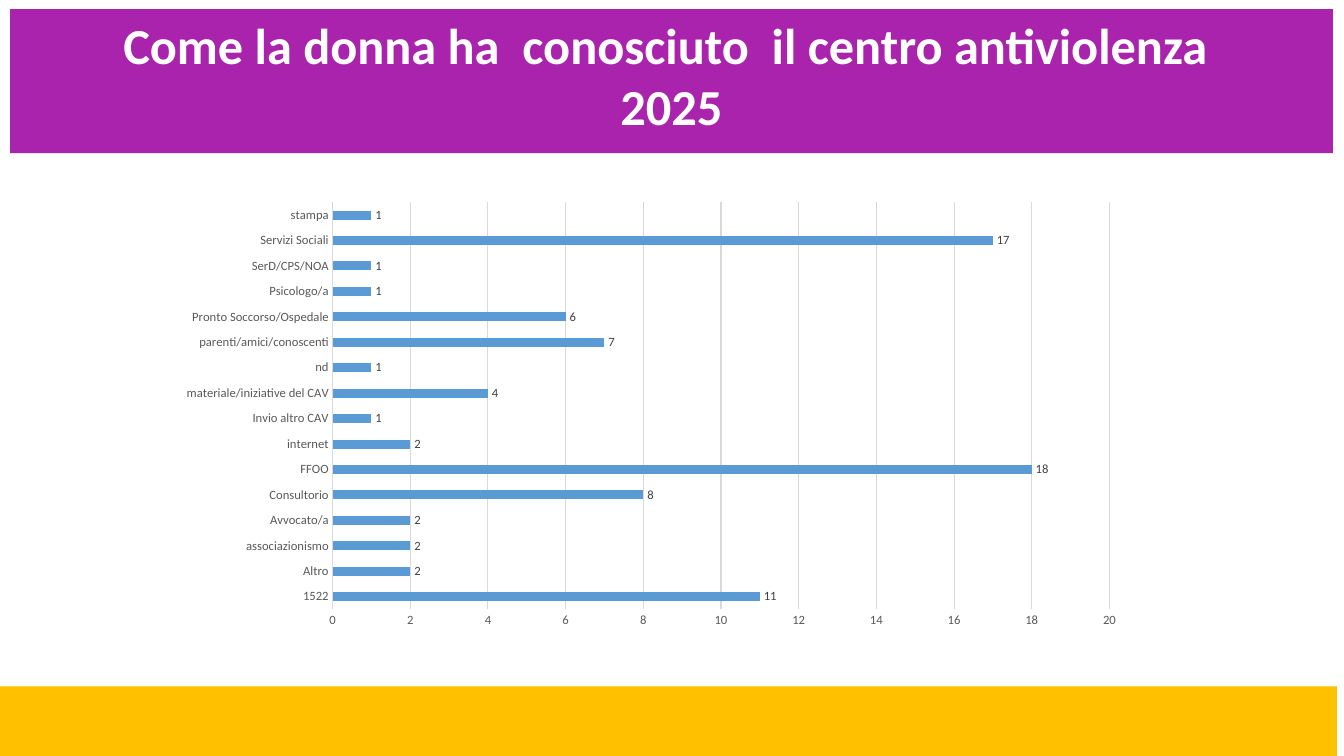
from dataclasses import dataclass

from pptx import Presentation
from pptx.chart.data import CategoryChartData
from pptx.dml.color import RGBColor
from pptx.enum.chart import XL_CHART_TYPE, XL_LABEL_POSITION, XL_TICK_MARK
from pptx.enum.shapes import MSO_SHAPE
from pptx.enum.text import MSO_ANCHOR, MSO_AUTO_SIZE, PP_ALIGN
from pptx.util import Inches, Pt

BAR_CLUSTERED = XL_CHART_TYPE.BAR_CLUSTERED
OUTSIDE_END = XL_LABEL_POSITION.OUTSIDE_END
NO_TICK = XL_TICK_MARK.NONE
RECTANGLE = MSO_SHAPE.RECTANGLE
TOP = MSO_ANCHOR.TOP
NO_AUTOFIT = MSO_AUTO_SIZE.NONE
CENTER = PP_ALIGN.CENTER


@dataclass(frozen=True)
class Theme:
    font: str = "Calibri"
    title_size: float = 36
    chart_size: float = 10
    label_size: float = 9
    hairline: float = 0.75
    white: str = "FFFFFF"
    black: str = "000000"
    purple: str = "AA23AD"
    amber: str = "FFC000"
    bar_blue: str = "5B9BD5"
    grid_grey: str = "D9D9D9"
    axis_grey: str = "595959"
    value_grey: str = "404040"


TITLE_LINES = ("Come la donna ha  conosciuto  il centro antiviolenza ", "2025")

# Contacts by referral channel, from the bottom bar upwards
CONTACTS = {
    "1522": 11,
    "Altro": 2,
    "associazionismo": 2,
    "Avvocato/a": 2,
    "Consultorio": 8,
    "FFOO": 18,
    "internet": 2,
    "Invio altro CAV": 1,
    "materiale/iniziative del CAV": 4,
    "nd": 1,
    "parenti/amici/conoscenti": 7,
    "Pronto Soccorso/Ospedale": 6,
    "Psicologo/a": 1,
    "SerD/CPS/NOA": 1,
    "Servizi Sociali": 17,
    "stampa": 1,
}


def apply(target, values):
    for attribute, value in values.items():
        setattr(target, attribute, value)


class SlideBuilder:
    def __init__(self, slide, theme):
        self.slide = slide
        self.theme = theme

    def style_font(self, font, size, color, bold=False):
        apply(font, {"name": self.theme.font, "size": Pt(size), "bold": bold})
        font.color.rgb = RGBColor.from_string(color)

    def fill(self, target, color):
        target.fill.solid()
        target.fill.fore_color.rgb = RGBColor.from_string(color)

    def style_line(self, line, color):
        line.color.rgb = RGBColor.from_string(color)
        line.width = Pt(self.theme.hairline)

    def title(self, lines, left, top, width, height):
        heading = self.slide.shapes.title
        apply(heading, {"left": Inches(left), "top": Inches(top),
                        "width": Inches(width), "height": Inches(height)})
        self.fill(heading, self.theme.purple)
        frame = heading.text_frame
        frame.text = "\n".join(lines)
        apply(frame, {"word_wrap": True, "auto_size": NO_AUTOFIT, "vertical_anchor": TOP,
                      "margin_top": Inches(0.05), "margin_bottom": Inches(0.05)})
        for paragraph in frame.paragraphs:
            apply(paragraph, {"alignment": CENTER, "line_spacing": 1.0, "space_before": Pt(0)})
            for run in paragraph.runs:
                self.style_font(run.font, self.theme.title_size, self.theme.white, bold=True)

    def band(self, color, left, top, width, height):
        band = self.slide.shapes.add_shape(
            RECTANGLE, Inches(left), Inches(top), Inches(width), Inches(height))
        band.shadow.inherit = False
        self.fill(band, color)
        band.line.fill.background()

    def bar_chart(self, counts, left, top, width, height):
        theme = self.theme
        data = CategoryChartData()
        data.categories = list(counts)
        data.add_series("Series 1", list(counts.values()))
        chart = self.slide.shapes.add_chart(
            BAR_CLUSTERED, Inches(left), Inches(top), Inches(width), Inches(height), data).chart
        apply(chart, {"has_legend": False, "has_title": False})
        self.style_font(chart.font, theme.chart_size, theme.black)

        # Axes
        channels, scale = chart.category_axis, chart.value_axis
        for axis in (channels, scale):
            apply(axis, {"major_tick_mark": NO_TICK, "minor_tick_mark": NO_TICK})
            self.style_font(axis.tick_labels.font, theme.label_size, theme.axis_grey)
        channels.has_major_gridlines = False
        self.style_line(channels.format.line, theme.grid_grey)
        apply(scale, {"minimum_scale": 0, "maximum_scale": 20, "major_unit": 2,
                      "has_major_gridlines": True})
        scale.format.line.fill.background()
        self.style_line(scale.major_gridlines.format.line, theme.grid_grey)

        # Bars and their values
        plot = chart.plots[0]
        apply(plot, {"gap_width": 182, "vary_by_categories": False})
        bars = plot.series[0]
        self.fill(bars.format, theme.bar_blue)
        values = bars.data_labels
        apply(values, {"show_value": True, "position": OUTSIDE_END})
        self.style_font(values.font, theme.label_size, theme.value_grey)


def main():
    deck = Presentation()
    apply(deck, {"slide_width": Inches(13.33), "slide_height": Inches(7.5)})
    theme = Theme()
    builder = SlideBuilder(deck.slides.add_slide(deck.slide_layouts[5]), theme)

    # Heading, footer band and chart
    builder.title(TITLE_LINES, 0.1, 0.09, 13.12, 1.43)
    builder.band(theme.amber, 0, 6.81, 13.26, 0.69)
    builder.bar_chart(CONTACTS, 1.66, 1.92, 9.6, 4.4)

    deck.save("out.pptx")


if __name__ == "__main__":
    main()
